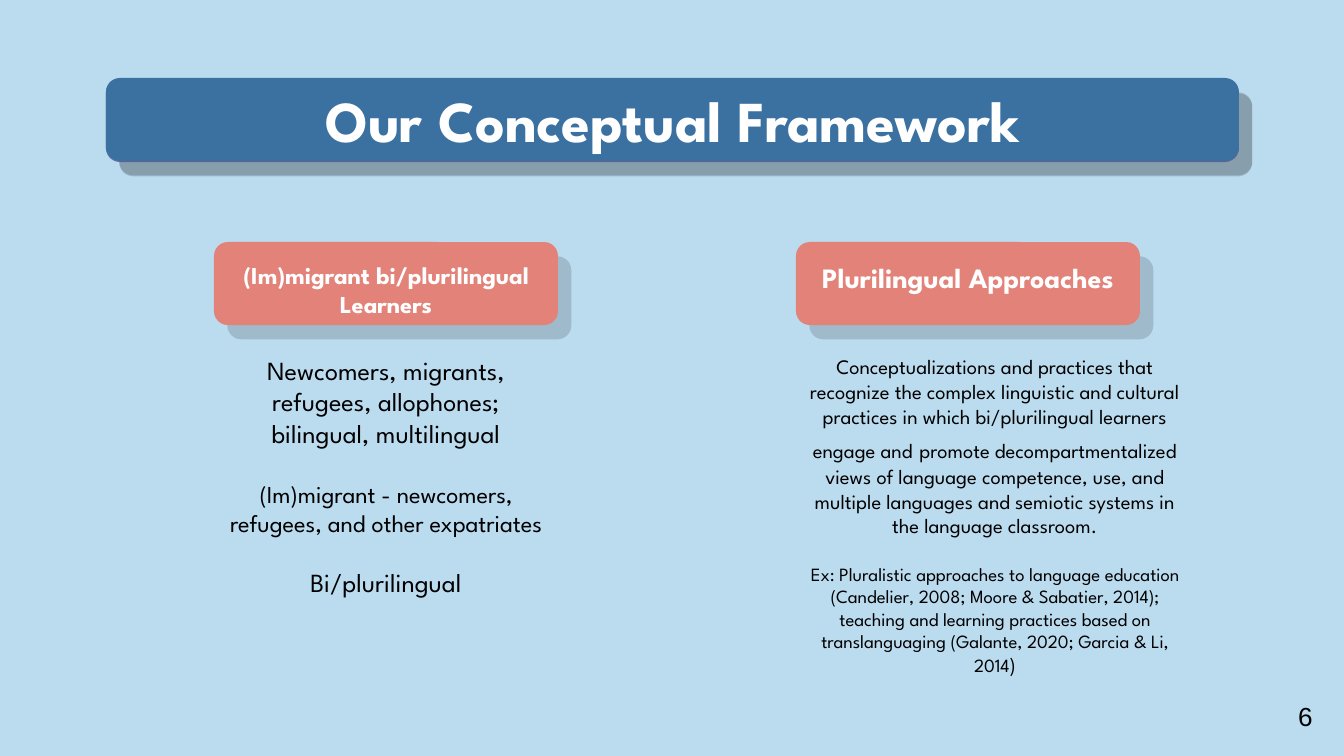
from lxml import etree
from pptx import Presentation
from pptx import util as u
from pptx.dml.color import RGBColor
from pptx.enum import shapes, text
from pptx.oxml import ns

SCALE = 914400 / 134.4  # EMU in one px
FONT = "League Spartan"


def px(n):
    return u.Emu(round(n * SCALE))


def rgb(value):
    return RGBColor.from_string(value)


def add_shadow(sp):
    sp.shadow.inherit = False
    effects = sp._element.spPr.find(ns.qn("a:effectLst"))
    shadow = etree.SubElement(effects, ns.qn("a:outerShdw"), dist=str(u.Pt(10.5)),
                              dir=str(47 * 60000), algn="bl", rotWithShape="0")
    color = etree.SubElement(shadow, ns.qn("a:srgbClr"), val="000000")
    etree.SubElement(color, ns.qn("a:alpha"), val="14000")


def add_panel(slide, box, fill):
    sp = slide.shapes.add_shape(shapes.MSO_SHAPE.ROUNDED_RECTANGLE, *map(px, box))
    sp.fill.solid()
    sp.fill.fore_color.rgb = rgb(fill)
    sp.line.fill.background()
    add_shadow(sp)


def style(font, size, color="000000", bold=False, name=FONT):
    font.size, font.bold, font.name = u.Pt(size), bold, name
    font.color.rgb = rgb(color)


def frame(sp, anchor=text.MSO_ANCHOR.TOP):
    tf = sp.text_frame
    tf.word_wrap, tf.auto_size = True, text.MSO_AUTO_SIZE.NONE
    tf.vertical_anchor = anchor
    tf.margin_left = tf.margin_right = tf.margin_top = tf.margin_bottom = u.Inches(0.1)
    return tf


def add_text(slide, box, paragraphs, color="000000", bold=False):
    """Each paragraph is (space before, runs); each run is (text, size[, font])."""
    tf = frame(slide.shapes.add_textbox(*map(px, box)))
    for i, (gap, runs) in enumerate(paragraphs):
        p = tf.add_paragraph() if i else tf.paragraphs[0]
        p.alignment = text.PP_ALIGN.CENTER
        if gap:
            p.space_before = u.Pt(gap)
        for words, size, *name in runs:
            r = p.add_run()
            r.text = words
            if len(runs) > 1:
                style(r.font, size, color, bold, *name)
        if len(runs) == 1:
            style(p.font, runs[0][1], color, bold)


def add_banner(slide, box, words):
    x, y, w, h = box
    add_panel(slide, (x, y + 1, w, h), "7671AF")
    add_panel(slide, box, "3A71A1")
    title = slide.shapes.title
    title.left, title.top, title.width, title.height = map(px, box)
    tf = frame(title, text.MSO_ANCHOR.MIDDLE)
    p = tf.paragraphs[0]
    p.text = words
    p.alignment = text.PP_ALIGN.CENTER
    style(p.font, 31, "FFFFFF", True)
    slide.shapes._spTree.append(title._element)  # title above its panel


def add_column(slide, box, heading, heading_size, body):
    x, y, w, h = box
    panel_w = 344
    add_panel(slide, (x, y, panel_w, 83), "E28279")
    add_text(slide, (x, y + 5, panel_w, 73), [(0, [(heading, heading_size)])], "FFFFFF", True)
    add_text(slide, (x, y + 99, w, h - 99), body)


def add_number(slide, box, number):
    tf = frame(slide.shapes.add_textbox(*map(px, box)))
    p = tf.paragraphs[0]
    p.text = number
    style(p.font, 14, name="Arial")


LEARNERS = [
    (0, [("Newcomers, migrants, refugees, allophones; bilingual, multilingual", 14)]),
    (16.6, [("(Im)migrant - newcomers, refugees, and other expatriates", 13)]),
    (15.5, [("Bi/plurilingual", 14)]),
]
APPROACHES = [
    (0, [("Conceptualizations and practices that recognize the complex linguistic and cultural "
          "practices in which bi/plurilingual learners engage and", 11),
         (" ", 16, "Calibri"),
         ("promote decompartmentalized views of language competence, use, and multiple "
          "languages and semiotic systems in the language classroom.", 11)]),
    (13.1, [("Ex: Pluralistic approaches to language education (Candelier, 2008; Moore & "
             "Sabatier, 2014); teaching and learning practices based on translanguaging "
             "(Galante, 2020; Garcia & Li, 2014", 10),
            (")", 11)]),
]


def main():
    prs = Presentation()
    prs.slide_width, prs.slide_height = px(1344), px(756)
    slide = prs.slides.add_slide(prs.slide_layouts[5])
    slide.background.fill.solid()
    slide.background.fill.fore_color.rgb = rgb("BBDBEF")

    add_banner(slide, (106, 78, 1133, 83), "Our Conceptual Framework")
    add_column(slide, (214, 242, 344, 479), "(Im)migrant bi/plurilingual Learners", 13, LEARNERS)
    add_column(slide, (796, 242, 398, 479), "Plurilingual Approaches", 15, APPROACHES)
    add_number(slide, (1285, 687, 47, 59), "6")
    prs.save("out.pptx")


if __name__ == "__main__":
    main()
